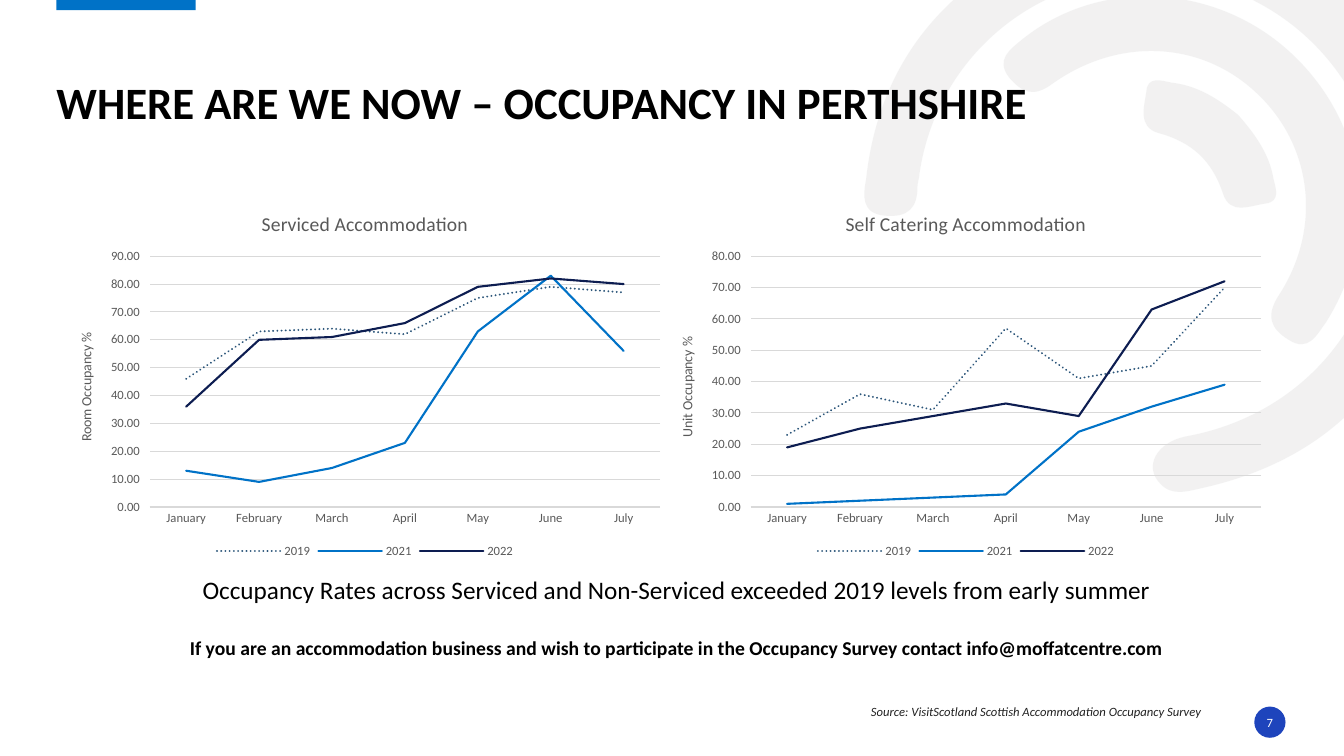
import dataclasses

import lxml.etree
import pptx
import pptx.chart.data
import pptx.dml.color
import pptx.enum.chart
import pptx.enum.dml
import pptx.enum.shapes
import pptx.enum.text
import pptx.oxml.ns
import pptx.util

Inches, Pt = pptx.util.Inches, pptx.util.Pt
Align, Anchor = pptx.enum.text.PP_ALIGN, pptx.enum.text.MSO_ANCHOR
Shape = pptx.enum.shapes.MSO_SHAPE
Tick = pptx.enum.chart.XL_TICK_MARK
qn = pptx.oxml.ns.qn


@dataclasses.dataclass(frozen=True)
class Theme:
    """Colours, font and type sizes of the slide."""
    font: str = "Calibri"
    ink: str = "000000"
    white: str = "FFFFFF"
    label: str = "595959"
    source: str = "212121"
    grid: str = "D9D9D9"
    arc: str = "E7E6E6"
    tab: str = "0072C7"
    badge: str = "1E44BC"
    lines: tuple = ("2C567A", "0072C7", "0D1D51")
    title: int = 32
    lead: int = 18
    body: int = 14
    axis: int = 10
    small: int = 9


THEME = Theme()
MONTHS = ["January", "February", "March", "April", "May", "June", "July"]
YEARS = ["2019", "2021", "2022"]
SERVICED = [[46, 63, 64, 62, 75, 79, 77], [13, 9, 14, 23, 63, 83, 56],
            [36, 60, 61, 66, 79, 82, 80]]
CATERED = [[23, 36, 31, 57, 41, 45, 70], [1, 2, 3, 4, 24, 32, 39],
           [19, 25, 29, 33, 29, 63, 72]]
ARCS = [
    [(14.13, 0.81, 14.43, 1.75, 14.12, 2.83), (13.8, 3.93, 13.04, 4.59, 11.93, 4.84),
     (11.79, 4.87, 11.63, 4.93, 11.51, 4.8), (11.34, 4.63, 11.47, 4.39, 11.76, 4.33),
     (13.04, 4.1, 13.87, 2.97, 13.67, 1.71), (13.51, 0.59, 12.53, -0.24, 11.41, -0.24),
     (10.25, -0.24, 9.29, 0.58, 9.12, 1.72), (9.12, 1.76, 9.1, 1.81, 9.1, 1.85),
     (9.1, 2.06, 9.01, 2.16, 8.78, 2.14), (8.54, 2.12, 8.56, 1.94, 8.59, 1.78),
     (8.69, 0.86, 9.13, 0.14, 9.92, -0.35), (11.01, -1.03, 12.42, -0.87, 13.47, 0.11)],
    [(13.57, 1.25, 13.7, 2.33, 13.15, 3.2), (13.06, 3.32, 12.98, 3.5, 12.78, 3.37),
     (12.6, 3.26, 12.55, 3.13, 12.69, 2.92), (13.12, 2.25, 13.01, 1.43, 12.46, 0.92),
     (11.92, 0.41, 11.1, 0.36, 10.44, 0.83), (10.25, 0.97, 10.14, 0.92, 10.01, 0.77),
     (9.87, 0.59, 10.02, 0.49, 10.14, 0.39), (10.91, -0.23, 12.07, -0.17, 12.82, 0.54)],
    [(12.43, 1.31, 12.59, 1.52, 12.63, 1.77), (12.65, 1.86, 12.71, 2, 12.55, 2.02),
     (12.4, 2.04, 12.2, 2.14, 12.13, 1.92), (12.02, 1.59, 11.82, 1.41, 11.49, 1.32),
     (11.28, 1.26, 11.35, 1.05, 11.37, 0.91), (11.38, 0.75, 11.52, 0.8, 11.62, 0.82),
     (11.88, 0.85, 12.08, 0.98, 12.28, 1.14)],
]


def tint(code):
    """Return the colour for a hex code."""
    return pptx.dml.color.RGBColor.from_string(code)


def style(font, size, color, bold=False, italic=False):
    """Set the look of a font."""
    font.name, font.size = THEME.font, Pt(size)
    font.bold, font.italic = bold, italic
    font.color.rgb = tint(color)


def write(frame, text, size=THEME.small, color=THEME.ink, align=Align.LEFT,
          bold=False, italic=False, more=False, before=0, leading=None):
    """Write one formatted paragraph, after the others when more is set."""
    para = frame.add_paragraph() if more else frame.paragraphs[0]
    para.alignment = align
    if before:
        para.space_before = Pt(before)
    if leading:
        para.line_spacing = leading
    run = para.add_run()
    run.text = text
    style(run.font, size, color, bold, italic)


def trim(frame):
    """Remove the inner margins of a text frame."""
    frame.margin_left = frame.margin_right = 0
    frame.margin_top = frame.margin_bottom = 0


def paint(shape, color):
    """Give a shape a flat fill with no line or shadow."""
    shape.shadow.inherit = False
    shape.fill.solid()
    shape.fill.fore_color.rgb = tint(color)
    shape.line.fill.background()


def bend(arc, curves):
    """Turn the straight segments of an outline into cubic curves."""
    for line, curve in zip(list(arc.element.iter(qn("a:lnTo"))), curves):
        cubic = lxml.etree.Element(qn("a:cubicBezTo"))
        for x, y in zip(curve[::2], curve[1::2]):
            lxml.etree.SubElement(cubic, qn("a:pt"), x=str(Inches(x) - arc.left),
                                  y=str(Inches(y) - arc.top))
        line.getparent().replace(line, cubic)


def add_arcs(slide):
    """Draw the pale arcs behind the content."""
    group = slide.shapes.add_group_shape()
    for curves in ARCS:
        ends = [(Inches(curve[4]), Inches(curve[5])) for curve in curves]
        pen = group.shapes.build_freeform(*ends[-1])
        pen.add_line_segments(ends, close=True)
        arc = pen.convert_to_shape()
        bend(arc, curves)
        paint(arc, THEME.arc)
        shade = arc.element.spPr.find(qn("a:solidFill"))[0]
        lxml.etree.SubElement(shade, qn("a:alpha"), val="53000")


def add_head(slide, left, top, width, height):
    """Place the blue tab and the title."""
    tab = slide.shapes.add_shape(Shape.RECTANGLE, Inches(left), Inches(-0.02),
                                 Inches(1.38), Inches(0.12))
    paint(tab, THEME.tab)
    title = slide.shapes.title
    title.element.getparent().append(title.element)
    title.left, title.top = Inches(left), Inches(top)
    title.width, title.height = Inches(width), Inches(height)
    frame = title.text_frame
    trim(frame)
    frame.vertical_anchor = Anchor.BOTTOM
    frame.auto_size = pptx.enum.text.MSO_AUTO_SIZE.NONE
    write(frame, "WHERE ARE WE NOW – OCCUPANCY IN PERTHSHIRE",
          size=THEME.title, bold=True, leading=0.9)


def add_graph(slide, left, top, width, height, name, unit, rows, peak):
    """Place one line chart of monthly occupancy."""
    data = pptx.chart.data.CategoryChartData(number_format="0.00")
    data.categories = MONTHS
    for year, row in zip(YEARS, rows):
        data.add_series(year, row)
    chart = slide.shapes.add_chart(
        pptx.enum.chart.XL_CHART_TYPE.LINE, Inches(left), Inches(top),
        Inches(width), Inches(height), data).chart
    style(chart.font, THEME.axis, THEME.ink)
    write(chart.chart_title.text_frame, name, size=THEME.body, color=THEME.label,
          align=Align.CENTER)
    chart.chart_title.include_in_layout = False
    chart.has_legend = True
    chart.legend.position = pptx.enum.chart.XL_LEGEND_POSITION.BOTTOM
    chart.legend.include_in_layout = False
    style(chart.legend.font, THEME.small, THEME.label)

    months, scale = chart.category_axis, chart.value_axis
    for axis, mark in ((months, Tick.NONE), (scale, Tick.OUTSIDE)):
        style(axis.tick_labels.font, THEME.small, THEME.label)
        axis.major_tick_mark = mark
    scale.minimum_scale, scale.maximum_scale, scale.major_unit = 0, peak, 10
    scale.tick_labels.number_format = "0.00"
    scale.tick_labels.number_format_is_linked = False
    scale.format.line.fill.background()
    write(scale.axis_title.text_frame, unit, size=THEME.axis, color=THEME.label,
          align=Align.CENTER)
    for line in (months.format.line, scale.major_gridlines.format.line):
        line.color.rgb, line.width = tint(THEME.grid), Pt(0.75)

    plot = chart.plots[0]
    plot.vary_by_categories = False
    for series, color in zip(plot.series, THEME.lines):
        series.smooth = False
        series.marker.style = pptx.enum.chart.XL_MARKER_STYLE.NONE
        series.format.line.color.rgb = tint(color)
        series.format.line.width = Pt(1.5)
    plot.series[0].format.line.dash_style = pptx.enum.dml.MSO_LINE.ROUND_DOT
    for line in chart.element.iterfind(".//" + qn("c:ser") + "/" + qn("c:spPr") + "/" + qn("a:ln")):
        line.set("cap", "rnd")

    area = chart.element.find(".//" + qn("c:plotArea"))
    layout = area.find(qn("c:layout"))
    if layout is None:
        layout = lxml.etree.Element(qn("c:layout"))
        area.insert(0, layout)
    inner = lxml.etree.SubElement(layout, qn("c:manualLayout"))
    for key, value in (("layoutTarget", "inner"), ("xMode", "edge"), ("yMode", "edge"),
                       ("x", "0.15"), ("y", "0.17"), ("w", "0.83"), ("h", "0.68")):
        lxml.etree.SubElement(inner, qn("c:" + key), val=value)


def add_box(slide, left, top, width, height):
    """Add an unwrapped text box and return its frame."""
    box = slide.shapes.add_textbox(Inches(left), Inches(top), Inches(width), Inches(height))
    box.text_frame.word_wrap = False
    return box.text_frame


def add_notes(slide, left, top, width, height):
    """Place the finding and the invitation below the charts."""
    frame = add_box(slide, left, top, width, height)
    write(frame, "Occupancy Rates across Serviced and Non-Serviced exceeded "
          "2019 levels from early summer", size=THEME.lead, align=Align.CENTER)
    write(frame, "If you are an accommodation business and wish to participate in the "
          "Occupancy Survey contact info@moffatcentre.com", size=THEME.body,
          align=Align.CENTER, bold=True, more=True, before=22)


def add_foot(slide, left, top, width, height):
    """Place the source line and the page badge."""
    write(add_box(slide, left, top, width, height),
          "Source: VisitScotland Scottish Accommodation Occupancy Survey",
          color=THEME.source, italic=True)
    badge = slide.shapes.add_shape(Shape.OVAL, Inches(left + 3.9), Inches(top + 0.08),
                                   Inches(0.31), Inches(0.31))
    paint(badge, THEME.badge)
    trim(badge.text_frame)
    badge.text_frame.vertical_anchor = Anchor.MIDDLE
    write(badge.text_frame, "7", color=THEME.white, align=Align.CENTER)


def main():
    """Build the slide and save it."""
    deck = pptx.Presentation()
    deck.slide_width, deck.slide_height = Inches(13.33), Inches(7.5)
    slide = deck.slides.add_slide(deck.slide_layouts[5])
    add_arcs(slide)
    add_head(slide, 0.56, 0.27, 12.19, 1.01)
    add_graph(slide, 0.57, 1.92, 6.1, 3.66, "Serviced Accommodation",
              "Room Occupancy %", SERVICED, 90)
    add_graph(slide, 6.53, 1.92, 6.1, 3.66, "Self Catering Accommodation",
              "Unit Occupancy %", CATERED, 80)
    add_notes(slide, 1.75, 5.65, 9.92, 0.94)
    add_foot(slide, 8.54, 6.93, 3.55, 0.25)
    deck.save("out.pptx")


if __name__ == "__main__":
    main()
